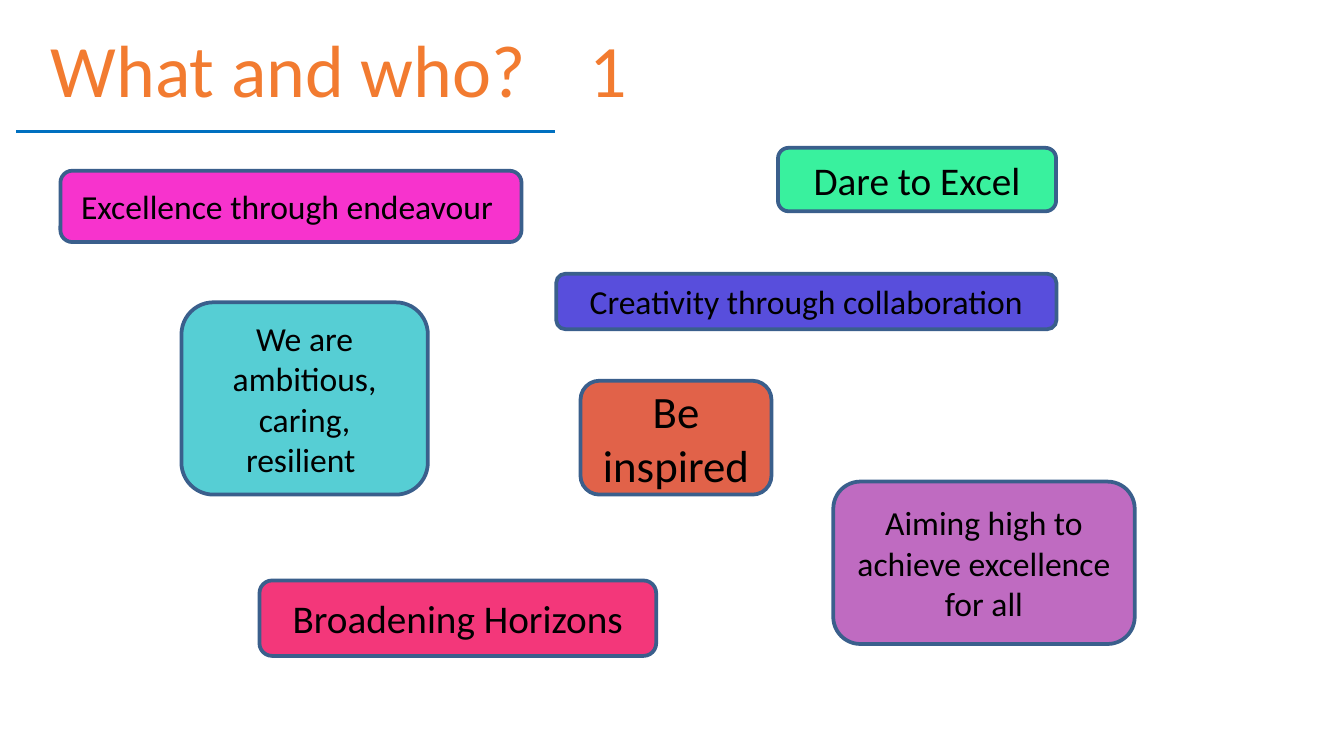
from dataclasses import dataclass

import pptx
import pptx.dml.color
import pptx.enum.shapes
import pptx.enum.text
import pptx.oxml
import pptx.oxml.ns
import pptx.util

Pt = pptx.util.Pt
Align = pptx.enum.text.PP_ALIGN


@dataclass(frozen=True)
class Theme:
    font: str = "Calibri"
    title: str = "F27B30"
    ink: str = "000000"
    rule: str = "0070C0"
    edge: str = "3A5F8C"
    head: float = 39.6
    small: float = 18
    mid: float = 21
    large: float = 24


THEME = Theme()


@dataclass(frozen=True)
class Motto:
    text: str
    left: float
    top: float
    width: float
    height: float
    fill: str
    size: float = THEME.small


MOTTOS = [
    Motto("Excellence through endeavour ", 32.4, 91.5, 247, 38.2, "F733CD"),
    Motto("Creativity through collaboration", 298, 146.7, 268, 29.7, "584EDC"),
    Motto("Broadening Horizons", 139, 311, 212.5, 40.4, "F3377A", THEME.mid),
    Motto("Dare to Excel", 416.8, 79.2, 149, 34, "39F19E", THEME.mid),
    Motto("Be inspired", 311, 204, 102.3, 61, "E16249", THEME.large),
    Motto("Aiming high to achieve excellence for all", 446.4, 258, 161.5, 87, "BF6BC1"),
    Motto("We are ambitious, caring, resilient ", 97.2, 162, 132, 103, "56CED4"),
]


def rgb(code: str) -> pptx.dml.color.RGBColor:
    return pptx.dml.color.RGBColor.from_string(code)


def write(shape, text: str, *, size: float, color: str, align=Align.LEFT, tab: float = 0) -> None:
    frame = shape.text_frame
    frame.word_wrap = True
    frame.vertical_anchor = pptx.enum.text.MSO_ANCHOR.MIDDLE
    para = frame.paragraphs[0]
    para.alignment = align
    if tab:
        props = para._p.get_or_add_pPr()
        tabs = pptx.oxml.ns.qn("a:tabLst")
        stop = props.makeelement(tabs, {})
        props.append(stop)
        stop.append(stop.makeelement(pptx.oxml.ns.qn("a:tab"), {"pos": str(Pt(tab)), "algn": "l"}))
    run = para.add_run()
    run.text = text
    run.font.name = THEME.font
    run.font.size = Pt(size)
    run.font.color.rgb = rgb(color)


def draw_rule(slide, left: float, right: float, top: float) -> None:
    line = slide.shapes.add_connector(
        pptx.enum.shapes.MSO_CONNECTOR.STRAIGHT, Pt(left), Pt(top), Pt(right), Pt(top))
    line.line.color.rgb = rgb(THEME.rule)
    line.line.width = Pt(1.5)
    props = line._element.spPr
    props.append(props.makeelement(pptx.oxml.ns.qn("a:effectLst"), {}))


def draw_motto(slide, item: Motto) -> None:
    box = slide.shapes.add_shape(
        pptx.enum.shapes.MSO_SHAPE.ROUNDED_RECTANGLE,
        Pt(item.left), Pt(item.top), Pt(item.width), Pt(item.height))
    box.shadow.inherit = False
    box.fill.solid()
    box.fill.fore_color.rgb = rgb(item.fill)
    box.line.color.rgb = rgb(THEME.edge)
    box.line.width = Pt(2)
    write(box, item.text, size=item.size, color=THEME.ink, align=Align.CENTER)


def main() -> None:
    deck = pptx.Presentation()
    deck.slide_width, deck.slide_height = Pt(720), Pt(405)
    slide = deck.slides.add_slide(deck.slide_layouts[6])

    # Heading, with its number at a tab stop
    draw_rule(slide, 8.6, 297.4, 70.6)
    head = slide.shapes.add_textbox(Pt(20), Pt(13), Pt(518.4), Pt(46.8))
    write(head, "What and who?\t1", size=THEME.head, color=THEME.title, tab=289)

    # Scattered mottos
    for item in MOTTOS:
        draw_motto(slide, item)

    deck.save("out.pptx")


if __name__ == "__main__":
    main()
